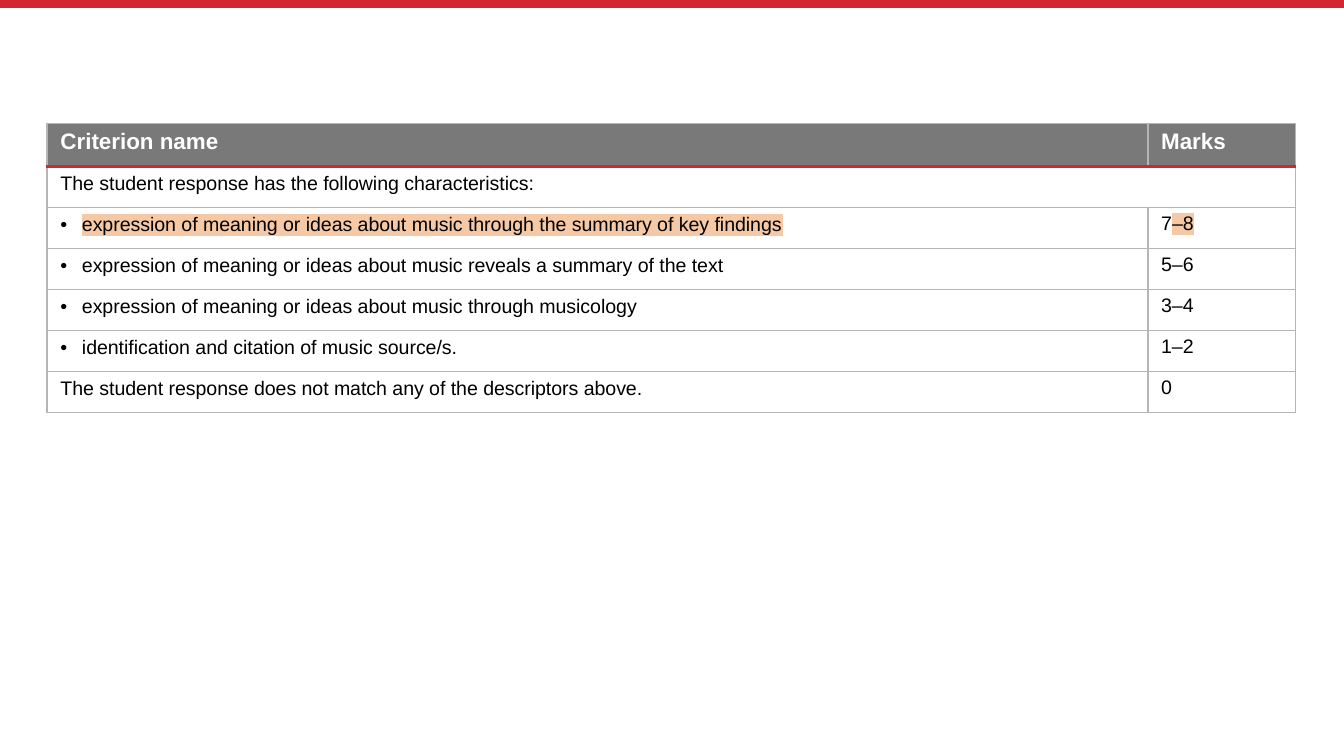
"""Build a slide with a marking criteria table."""
from dataclasses import dataclass

from lxml import etree
from pptx import Presentation
from pptx.dml.color import RGBColor
from pptx.enum.shapes import MSO_CONNECTOR
from pptx.oxml.ns import qn
from pptx.util import Inches, Pt

STRAIGHT = MSO_CONNECTOR.STRAIGHT


@dataclass(frozen=True)
class Theme:
    font: str = "Arial"
    red: str = "D22730"
    header_fill: str = "797979"
    grid: str = "B5B5B5"
    white: str = "FFFFFF"
    black: str = "000000"
    highlight: str = "F6C9A6"
    header_size: float = 12
    body_size: float = 10.5


theme = Theme()


def write_text(cell, text, size=theme.body_size, color=theme.black, bold=False,
               descriptor=False, bullet=False, highlight_from=None):
    paragraph = cell.text_frame.paragraphs[0]
    if bullet:
        properties = paragraph._p.get_or_add_pPr()
        properties.set("marL", str(Inches(0.16)))
        properties.set("indent", str(-Inches(0.16)))
        etree.SubElement(properties, qn("a:buFont"), typeface=theme.font)
        etree.SubElement(properties, qn("a:buChar"), char="•")
    if descriptor:
        paragraph.line_spacing = 1.05
        paragraph.space_after = Pt(2)
    split = len(text) if highlight_from is None else highlight_from
    for part, marked in ((text[:split], False), (text[split:], True)):
        if not part:
            continue
        run = paragraph.add_run()
        run.text = part
        run.font.size = Pt(size)
        run.font.bold = bold
        run.font.color.rgb = RGBColor.from_string(color)
        if marked:
            highlight = etree.SubElement(run._r.get_or_add_rPr(), qn("a:highlight"))
            etree.SubElement(highlight, qn("a:srgbClr"), val=theme.highlight)
        run.font.name = theme.font


def set_borders(cell, top=(theme.grid, 1), bottom=(theme.grid, 1)):
    side = (theme.grid, 1)
    borders = (("a:lnL", side), ("a:lnR", side), ("a:lnT", top), ("a:lnB", bottom))
    for position, (tag, (color, width)) in enumerate(borders):
        line = etree.Element(qn(tag), w=str(Pt(width)))
        fill = etree.SubElement(line, qn("a:solidFill"))
        etree.SubElement(fill, qn("a:srgbClr"), val=color)
        cell._tc.get_or_add_tcPr().insert(position, line)


presentation = Presentation()
presentation.slide_width = Inches(10)
presentation.slide_height = presentation.slide_width * 9 // 16
slide = presentation.slides.add_slide(presentation.slide_layouts[6])

top_rule = slide.shapes.add_connector(STRAIGHT, 0, Inches(0.03), Inches(10), Inches(0.03))
top_rule.line.color.rgb = RGBColor.from_string(theme.red)
top_rule.line.width = Pt(4.2)
etree.SubElement(top_rule._element.spPr, qn("a:effectLst"))

criteria = [
    ("Criterion name", "Marks", {}, {}),
    ("The student response has the following characteristics:", "", {}, {}),
    ("expression of meaning or ideas about music through the summary of key findings",
     "7–8", {"bullet": True, "highlight_from": 0}, {"highlight_from": 1}),
    ("expression of meaning or ideas about music reveals a summary of the text",
     "5–6", {"bullet": True}, {}),
    ("expression of meaning or ideas about music through musicology",
     "3–4", {"bullet": True}, {}),
    ("identification and citation of music source/s.", "1–2", {"bullet": True}, {}),
    ("The student response does not match any of the descriptors above.", "0", {}, {}),
]

table_height, header_height = Inches(2.15), Inches(0.32)
body_height = (table_height - header_height) // (len(criteria) - 1)
table = slide.shapes.add_table(len(criteria), 2, Inches(0.35), Inches(0.92),
                               Inches(9.29), table_height).table
table.first_row = False
table.horz_banding = False
table.columns[0].width = Inches(8.19)
table.columns[1].width = Inches(1.1)
header_rule = (theme.red, 1.5)

for index, (criterion, marks, criterion_format, marks_format) in enumerate(criteria):
    header = index == 0
    table.rows[index].height = header_height if header else body_height
    columns = ((criterion, criterion_format), (marks, marks_format))
    for column, (text, text_format) in enumerate(columns):
        cell = table.cell(index, column)
        cell.margin_left = cell.margin_right = Inches(0.1)
        cell.margin_top = cell.margin_bottom = Inches(0.04)
        if header:
            cell.fill.solid()
            cell.fill.fore_color.rgb = RGBColor.from_string(theme.header_fill)
            set_borders(cell, bottom=header_rule)
            write_text(cell, text, size=theme.header_size, color=theme.white, bold=True)
        else:
            cell.fill.background()
            set_borders(cell, top=header_rule if index == 1 else (theme.grid, 1))
            write_text(cell, text, descriptor=column == 0, **text_format)

table.cell(1, 0).merge(table.cell(1, 1))

presentation.save("out.pptx")
